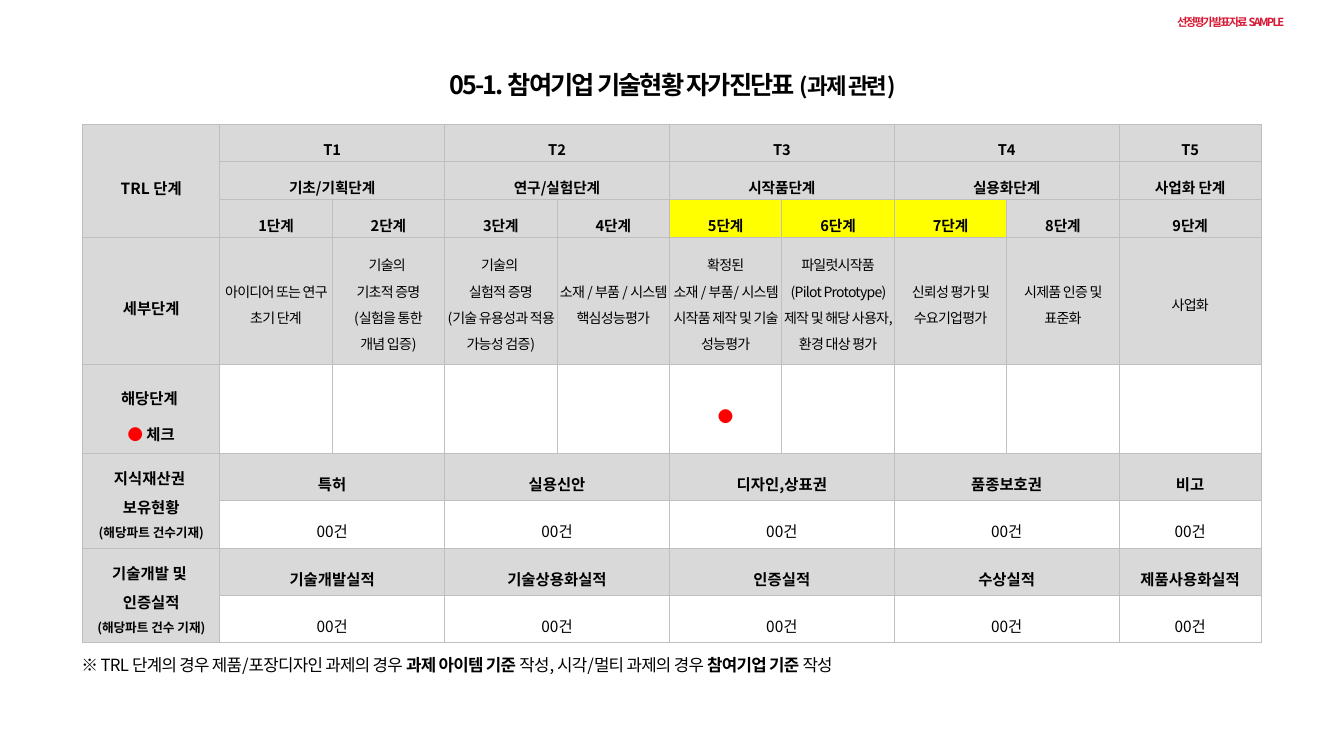
"""Build the technology readiness self-assessment slide."""
from lxml.etree import SubElement
from pptx import Presentation
from pptx.dml.color import RGBColor as Rgb
from pptx.enum.text import MSO_ANCHOR as Anchor, MSO_AUTO_SIZE as Fit, PP_ALIGN as Align
from pptx.oxml.ns import qn
from pptx.util import Inches, Pt

FONT = "Noto Sans CJK KR"
COLORS = {"ink": "000000", "tag": "D71733", "mark": "FF0000", "head": "D9D9D9",
          "reached": "FFFF00", "border": "BFBFBF"}

TITLE = [[("05-1. 참여기업 기술현황 자가진단표 ", {}), ("(과제 관련)", {"size": 16})]]
TAG = "선정평가 발표자료 SAMPLE "
NOTE = [[("※ TRL 단계의 경우 제품/포장디자인 과제의 경우 ", {}),
         ("과제 아이템 기준 ", {"bold": True}),
         ("작성, 시각/멀티 과제의 경우 ", {}),
         ("참여기업 기준 ", {"bold": True}),
         ("작성", {})]]

PHASES = [
    ["T1", "T2", "T3", "T4", "T5"],
    ["기초/기획단계", "연구/실험단계", "시작품단계", "실용화단계", "사업화 단계"],
]
REACHED = (5, 6, 7)
CHECKED = 5
STEP_DETAILS = [
    ["아이디어 또는 연구 초기 단계"],
    ["기술의 ", "기초적 증명", "(실험을 통한", "개념 입증)"],
    ["기술의 ", "실험적 증명", "(기술 유용성과 적용 가능성 검증)"],
    ["소재 / 부품 / 시스템 핵심성능평가"],
    ["확정된", "소재 / 부품/ 시스템 시작품 제작 및 기술 성능평가"],
    ["파일럿시작품", "(Pilot Prototype) 제작 및 해당 사용자, 환경 대상 평가"],
    ["신뢰성 평가 및 수요기업평가"],
    ["시제품 인증 및 표준화"],
    ["사업화"],
]
CHECK_LABEL = [["해당단계 "],
               [("● ", {"color": "mark", "bold": False}), ("체크", {})]]
RECORDS = [
    (["지식재산권 ", "보유현황", "(해당파트 건수기재)"],
     ["특허", "실용신안", "디자인,상표권", "품종보호권", "비고"]),
    (["기술개발 및 ", "인증실적", "(해당파트 건수 기재)"],
     ["기술개발실적", "기술상용화실적", "인증실적", "수상실적", "제품사용화실적"]),
]
COUNT = "00건"

TABLE_LEFT, TABLE_TOP, TABLE_WIDTH = 0.82, 1.23, 11.69
LABEL_WIDTH, LAST_WIDTH, STEPS = 1.36, 1.41, 9
ROW_HEIGHTS = [0.35] * 3 + [1.26, 0.88] + [0.47] * 4
DETAIL_ROW, CHECK_ROW, RECORD_ROW = 3, 4, 5


def write(frame, content, size=11, bold=False, color="ink", spacing=0,
          align=Align.CENTER, lines=None):
    """Fill a text frame with paragraphs of plain strings or (text, changes) runs."""
    paragraphs = [content] if isinstance(content, str) else content
    for index, runs in enumerate(paragraphs):
        para = frame.paragraphs[0] if index == 0 else frame.add_paragraph()
        para.alignment = align
        if lines:
            para.line_spacing = lines
        for run in [runs] if isinstance(runs, str) else runs:
            text, changes = (run, {}) if isinstance(run, str) else run
            look = {"size": size, "bold": bold, "color": color, **changes}
            span = para.add_run()
            span.text = text
            span.font.size = Pt(look["size"])
            span.font.bold = look["bold"]
            span.font.color.rgb = Rgb.from_string(COLORS[look["color"]])
            span.font.name = FONT
            properties = span.font._element
            properties.set("spc", str(round(spacing * 100)))
            SubElement(properties, qn("a:ea"), typeface=FONT)


def add_borders(cell):
    """Draw the thin grey line on all four sides of a cell."""
    properties = cell._tc.get_or_add_tcPr()
    for index, side in enumerate("LRTB"):
        line = SubElement(properties, qn(f"a:ln{side}"), w=str(Pt(0.75)))
        fill = SubElement(line, qn("a:solidFill"))
        SubElement(fill, qn("a:srgbClr"), val=COLORS["border"])
        properties.insert(index, line)


def fill_cell(table, row, column, content, rows=1, columns=1, fill="head",
              inset=0.01, anchor=Anchor.MIDDLE, lines=1.6, **look):
    """Merge, colour and write one cell."""
    cell = table.cell(row, column)
    if rows * columns > 1:
        cell.merge(table.cell(row + rows - 1, column + columns - 1))
    if fill:
        cell.fill.solid()
        cell.fill.fore_color.rgb = Rgb.from_string(COLORS[fill])
    cell.margin_left = cell.margin_right = Inches(inset)
    cell.margin_top = cell.margin_bottom = Inches(inset)
    cell.vertical_anchor = anchor
    write(cell.text_frame, content, lines=lines, **look)


def fill_phases(table, row, labels, **look):
    """Write five cells that each cover two steps, the last one only one."""
    for index, label in enumerate(labels):
        column = 1 + 2 * index
        fill_cell(table, row, column, label, columns=min(2, STEPS + 1 - column), **look)


def add_table(page):
    """Place the assessment table."""
    table = page.shapes.add_table(
        len(ROW_HEIGHTS), STEPS + 1, Inches(TABLE_LEFT), Inches(TABLE_TOP),
        Inches(TABLE_WIDTH), Inches(sum(ROW_HEIGHTS))).table
    table.first_row = table.horz_banding = False
    step_width = (TABLE_WIDTH - LABEL_WIDTH - LAST_WIDTH) / (STEPS - 1)
    widths = [LABEL_WIDTH] + [step_width] * (STEPS - 1) + [LAST_WIDTH]
    for column, width in zip(table.columns, widths):
        column.width = Inches(width)
    for row, height in zip(table.rows, ROW_HEIGHTS):
        row.height = Inches(height)
    for cell in table.iter_cells():
        cell.fill.background()
        add_borders(cell)

    heading = {"inset": 0.02, "anchor": Anchor.TOP, "size": 10.5, "bold": True}
    fill_cell(table, 0, 0, "TRL 단계", rows=3, bold=True)
    for row, labels in enumerate(PHASES):
        fill_phases(table, row, labels, **heading)
    fill_cell(table, DETAIL_ROW, 0, "세부단계", bold=True)
    for step, detail in enumerate(STEP_DETAILS, 1):
        fill_cell(table, len(PHASES), step, f"{step}단계",
                  fill="reached" if step in REACHED else "head", **heading)
        fill_cell(table, DETAIL_ROW, step, detail, inset=0.02, lines=1.3,
                  size=10, spacing=-0.5)
    fill_cell(table, CHECK_ROW, 0, CHECK_LABEL, bold=True)
    fill_cell(table, CHECK_ROW, CHECKED, "●", fill=None, color="mark")
    for index, (label, kinds) in enumerate(RECORDS):
        row = RECORD_ROW + 2 * index
        *names, hint = label
        fill_cell(table, row, 0, names + [[(hint, {"size": 9})]], rows=2,
                  lines=1.3, bold=True)
        fill_phases(table, row, kinds, bold=True)
        fill_phases(table, row + 1, [COUNT] * len(kinds), fill=None)


def add_label(page, place, content, wrap, **look):
    """Place a free text box."""
    box = page.shapes.add_textbox(*map(Inches, place))
    box.text_frame.word_wrap = wrap
    box.text_frame.auto_size = Fit.SHAPE_TO_FIT_TEXT
    write(box.text_frame, content, **look)


def main():
    """Assemble and save the deck."""
    deck = Presentation()
    deck.slide_width, deck.slide_height = Inches(13.33), Inches(7.5)
    page = deck.slides.add_slide(deck.slide_layouts[5])
    title = page.shapes.title
    title.left, title.top, title.width, title.height = map(Inches, (2.99, 0.61, 7.36, 0.46))
    title.text_frame.word_wrap = False
    title.text_frame.auto_size = Fit.NONE
    title.text_frame.vertical_anchor = Anchor.MIDDLE
    write(title.text_frame, TITLE, size=18, bold=True, spacing=-1.3)
    add_table(page)
    add_label(page, (11.5, 0.1, 1.42, 0.24), TAG, True,
              size=8, bold=True, color="tag", spacing=-1.3)
    add_label(page, (0.71, 6.45, 8.58, 0.3), NOTE, False,
              size=12, spacing=-0.5, align=Align.LEFT)
    deck.save("out.pptx")


if __name__ == "__main__":
    main()
